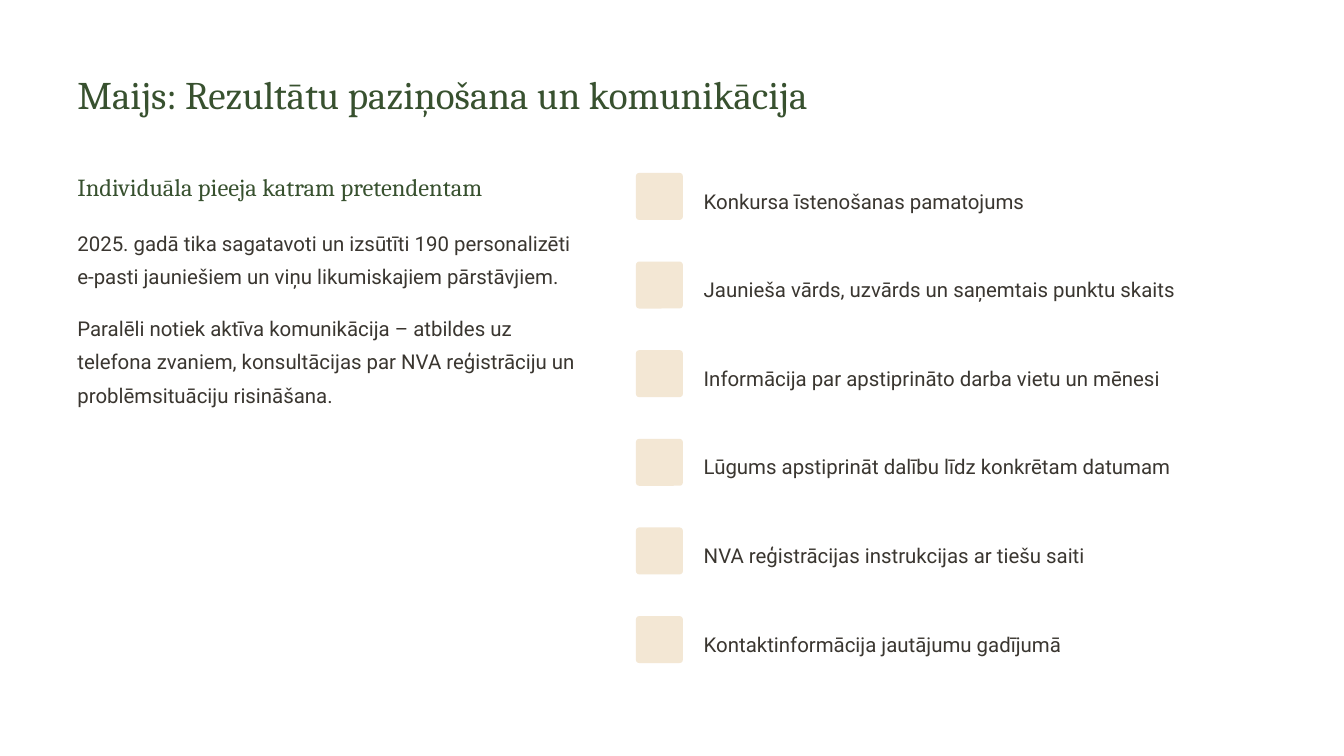
from pptx import Presentation
from pptx.dml.color import RGBColor
from pptx.enum import shapes, text
from pptx.util import Cm, Pt

GREEN, BROWN, SAND = "38512F", "3A3630", "F3E7D4"
LEFT_EDGE = 2.34
MARKER_LEFT, MARKER_TOP, MARKER_SIZE, ROW_PITCH = 19.23, 5.23, 1.42, 2.68
LABEL_LEFT, LABEL_DROP = 21.28, 0.21

TITLE = "Maijs: Rezultātu paziņošana un komunikācija"
SUBTITLE = "Individuāla pieeja katram pretendentam"
BODY = [
    (6.71, 2.03, "2025. gadā tika sagatavoti un izsūtīti 190 personalizēti "
     "e-pasti jauniešiem un viņu likumiskajiem pārstāvjiem."),
    (9.3, 3.02, "Paralēli notiek aktīva komunikācija – atbildes uz telefona zvaniem, "
     "konsultācijas par NVA reģistrāciju un problēmsituāciju risināšana."),
]
EMAIL_CONTENTS = [
    "Konkursa īstenošanas pamatojums",
    "Jaunieša vārds, uzvārds un saņemtais punktu skaits",
    "Informācija par apstiprināto darba vietu un mēnesi",
    "Lūgums apstiprināt dalību līdz konkrētam datumam",
    "NVA reģistrācijas instrukcijas ar tiešu saiti",
    "Kontaktinformācija jautājumu gadījumā",
]


def color(value):
    """Turn a hex string into a colour."""
    return RGBColor.from_string(value)


def write(shape, words, font, size, line_height, ink):
    """Fill a shape with one left-aligned paragraph without insets."""
    frame = shape.text_frame
    frame.margin_left = frame.margin_right = frame.margin_top = frame.margin_bottom = 0
    frame.word_wrap = True
    frame.auto_size = text.MSO_AUTO_SIZE.NONE
    frame.vertical_anchor = text.MSO_ANCHOR.TOP
    paragraph = frame.paragraphs[0]
    paragraph.alignment = text.PP_ALIGN.LEFT
    paragraph.line_spacing = Pt(line_height)
    paragraph.space_before = Pt(0)
    run = paragraph.add_run()
    run.text = words
    run.font.name = font
    run.font.size = Pt(size)
    run.font.color.rgb = color(ink)


def add_title(slide, words):
    """Place and format the title placeholder."""
    title = slide.shapes.title
    title.left, title.top, title.width, title.height = Cm(LEFT_EDGE), Cm(2.08), Cm(24.61), Cm(1.5)
    write(title, words, "Cambria", 33.5, 42, GREEN)


def add_text(slide, left, top, width, height, words, font="Roboto", size=17.5,
             line_height=28.5, ink=BROWN):
    """Add a text box, in body style by default."""
    box = slide.shapes.add_textbox(Cm(left), Cm(top), Cm(width), Cm(height))
    write(box, words, font, size, line_height, ink)


def add_marker(slide, left, top):
    """Add a sand-coloured rounded square."""
    marker = slide.shapes.add_shape(
        shapes.MSO_SHAPE.ROUNDED_RECTANGLE, Cm(left), Cm(top), Cm(MARKER_SIZE), Cm(MARKER_SIZE))
    marker.adjustments[0] = 0.07
    marker.shadow.inherit = False
    marker.fill.solid()
    marker.fill.fore_color.rgb = color(SAND)
    marker.line.fill.background()


def main():
    """Build and save the slide."""
    presentation = Presentation()
    presentation.slide_width, presentation.slide_height = Cm(40.64), Cm(22.86)
    slide = presentation.slides.add_slide(presentation.slide_layouts[5])
    add_title(slide, TITLE)
    add_text(slide, LEFT_EDGE, 5.16, 13.77, 0.94, SUBTITLE, "Cambria", 21, 26, GREEN)
    for top, height, words in BODY:
        add_text(slide, LEFT_EDGE, top, 15.34, height, words)
    for row, words in enumerate(EMAIL_CONTENTS):
        top = MARKER_TOP + row * ROW_PITCH
        add_marker(slide, MARKER_LEFT, top)
        add_text(slide, LABEL_LEFT, top + LABEL_DROP, 17.04, 1.02, words)
    presentation.save("out.pptx")


if __name__ == "__main__":
    main()
